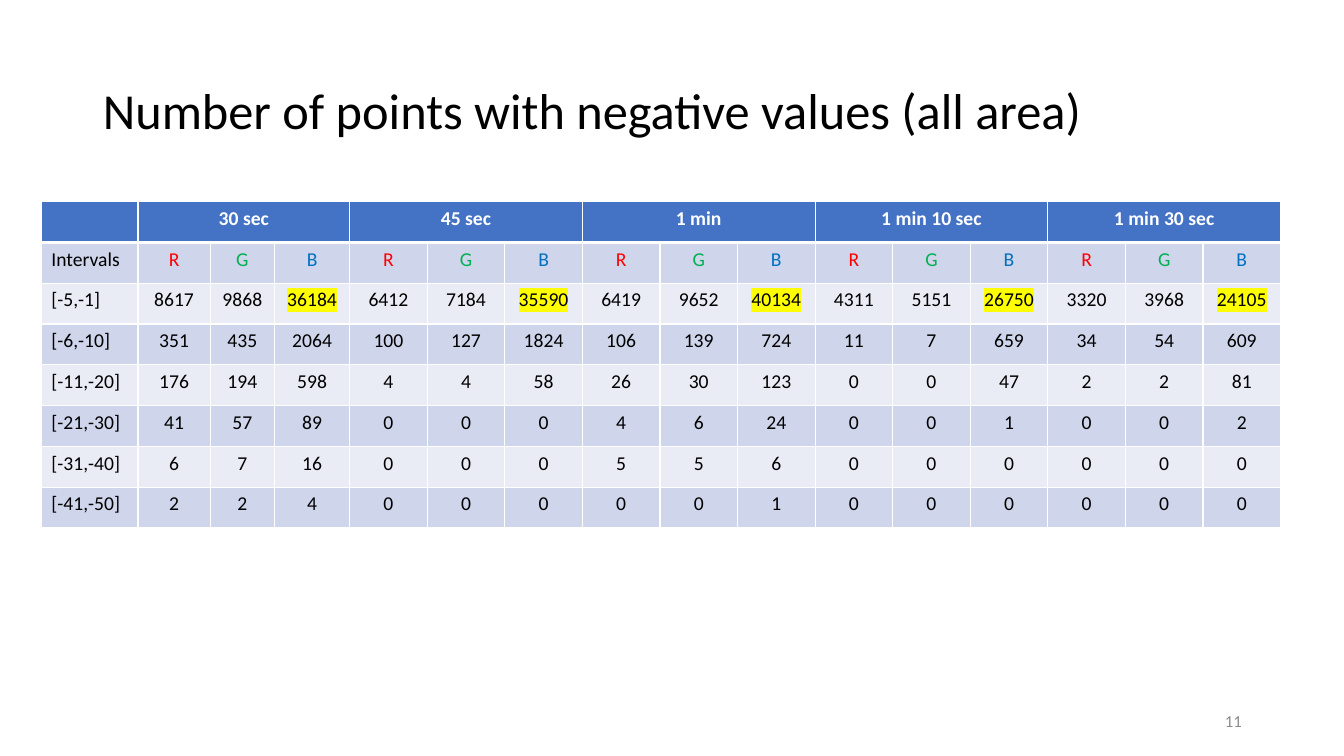
"""Build the slide that tabulates negative-value points by exposure time."""
from dataclasses import dataclass
from typing import Optional

from lxml.etree import SubElement
from pptx import Presentation
from pptx.dml.color import RGBColor
from pptx.enum.text import MSO_ANCHOR, PP_ALIGN
from pptx.oxml import parse_xml
from pptx.oxml.ns import nsdecls, qn
from pptx.util import Emu, Pt

PX = 4572
FONT = "Calibri"
BLACK = RGBColor(0x00, 0x00, 0x00)
WHITE = RGBColor(0xFF, 0xFF, 0xFF)
GREY = RGBColor(0x8C, 0x8C, 0x8C)
RED = RGBColor(0xFF, 0x00, 0x00)
GREEN = RGBColor(0x00, 0xB0, 0x50)
BLUE = RGBColor(0x00, 0x70, 0xC0)
YELLOW = RGBColor(0xFF, 0xFF, 0x00)
HEADER = RGBColor(0x44, 0x72, 0xC4)
BANDS = (RGBColor(0xCF, 0xD5, 0xEA), RGBColor(0xE9, 0xEB, 0xF5))

EXPOSURES = ("30 sec", "45 sec", "1 min", "1 min 10 sec", "1 min 30 sec")
CHANNELS = (("R", RED), ("G", GREEN), ("B", BLUE))
COL_WIDTHS = (192, 143, 128, 149) + (154,) * 12
ROW_HEIGHT = 81


@dataclass(frozen=True)
class Interval:
    label: str
    counts: tuple[int, ...]
    peak: bool = False


INTERVALS = (
    Interval("[-5,-1]", (8617, 9868, 36184, 6412, 7184, 35590, 6419, 9652, 40134,
                         4311, 5151, 26750, 3320, 3968, 24105), peak=True),
    Interval("[-6,-10]", (351, 435, 2064, 100, 127, 1824, 106, 139, 724,
                          11, 7, 659, 34, 54, 609)),
    Interval("[-11,-20]", (176, 194, 598, 4, 4, 58, 26, 30, 123, 0, 0, 47, 2, 2, 81)),
    Interval("[-21,-30]", (41, 57, 89, 0, 0, 0, 4, 6, 24, 0, 0, 1, 0, 0, 2)),
    Interval("[-31,-40]", (6, 7, 16, 0, 0, 0, 5, 5, 6, 0, 0, 0, 0, 0, 0)),
    Interval("[-41,-50]", (2, 2, 4, 0, 0, 0, 0, 0, 1, 0, 0, 0, 0, 0, 0)),
)


def px(n: int) -> Emu:
    return Emu(n * PX)


def write(tf, text: str, *, size: int = 14, color: RGBColor = BLACK, bold: bool = False,
          align: PP_ALIGN = PP_ALIGN.CENTER, spacing: Optional[float] = None,
          highlight: Optional[RGBColor] = None) -> None:
    p = tf.paragraphs[0]
    p.alignment = align
    p.line_spacing = spacing
    r = p.add_run()
    r.text = text
    r.font.size = Pt(size)
    r.font.name = FONT
    r.font.bold = bold
    r.font.color.rgb = color
    if highlight is not None:
        mark = parse_xml(f'<a:highlight {nsdecls("a")}><a:srgbClr val="{highlight}"/></a:highlight>')
        r._r.get_or_add_rPr().find(qn("a:solidFill")).addnext(mark)


def style_cell(cell, fill: RGBColor, top: int = 1, bottom: int = 1) -> None:
    tcPr = cell._tc.get_or_add_tcPr()
    for side, width in (("L", 1), ("R", 1), ("T", top), ("B", bottom)):
        ln = SubElement(tcPr, qn(f"a:ln{side}"), w=str(Pt(width)))
        SubElement(SubElement(ln, qn("a:solidFill")), qn("a:srgbClr"), val=str(WHITE))
    cell.fill.solid()
    cell.fill.fore_color.rgb = fill


def add_counts_table(slide) -> None:
    n_rows = len(INTERVALS) + 2
    table = slide.shapes.add_table(n_rows, len(COL_WIDTHS), px(82), px(400),
                                   px(sum(COL_WIDTHS)), px(ROW_HEIGHT * n_rows)).table
    for col, width in zip(table.columns, COL_WIDTHS):
        col.width = px(width)
    for i, row in enumerate(table.rows):
        row.height = px(ROW_HEIGHT)
        for cell in row.cells:
            style_cell(cell, HEADER if i == 0 else BANDS[(i - 1) % 2],
                       top=3 if i == 1 else 1, bottom=3 if i == 0 else 1)

    write(table.cell(1, 0).text_frame, "Intervals", align=PP_ALIGN.LEFT)
    for i, exposure in enumerate(EXPOSURES):
        first = 1 + i * len(CHANNELS)
        head = table.cell(0, first)
        head.merge(table.cell(0, first + len(CHANNELS) - 1))
        write(head.text_frame, exposure, color=WHITE, bold=True)
        for j, (channel, color) in enumerate(CHANNELS):
            write(table.cell(1, first + j).text_frame, channel, color=color)

    for i, interval in enumerate(INTERVALS, start=2):
        write(table.cell(i, 0).text_frame, interval.label, align=PP_ALIGN.LEFT)
        for j, count in enumerate(interval.counts, start=1):
            marked = interval.peak and j % len(CHANNELS) == 0
            write(table.cell(i, j).text_frame, str(count),
                  highlight=YELLOW if marked else None)


def place(sp, left: int, top: int, width: int, height: int) -> None:
    sp.left, sp.top, sp.width, sp.height = px(left), px(top), px(width), px(height)
    sp.text_frame.word_wrap = True
    sp.text_frame.vertical_anchor = MSO_ANCHOR.MIDDLE


def main() -> None:
    prs = Presentation()
    prs.slide_width, prs.slide_height = px(2667), px(1500)
    slide = prs.slides.add_slide(prs.slide_layouts[5])

    title = slide.shapes.title
    place(title, 184, 80, 2300, 290)
    write(title.text_frame, "Number of points with negative values (all area)",
          size=36, align=PP_ALIGN.LEFT, spacing=0.9)

    add_counts_table(slide)

    number = slide.shapes.add_textbox(0, 0, 0, 0)
    place(number, 1884, 1390, 600, 80)
    write(number.text_frame, "11", size=12, color=GREY, align=PP_ALIGN.RIGHT)

    prs.save("out.pptx")


if __name__ == "__main__":
    main()
